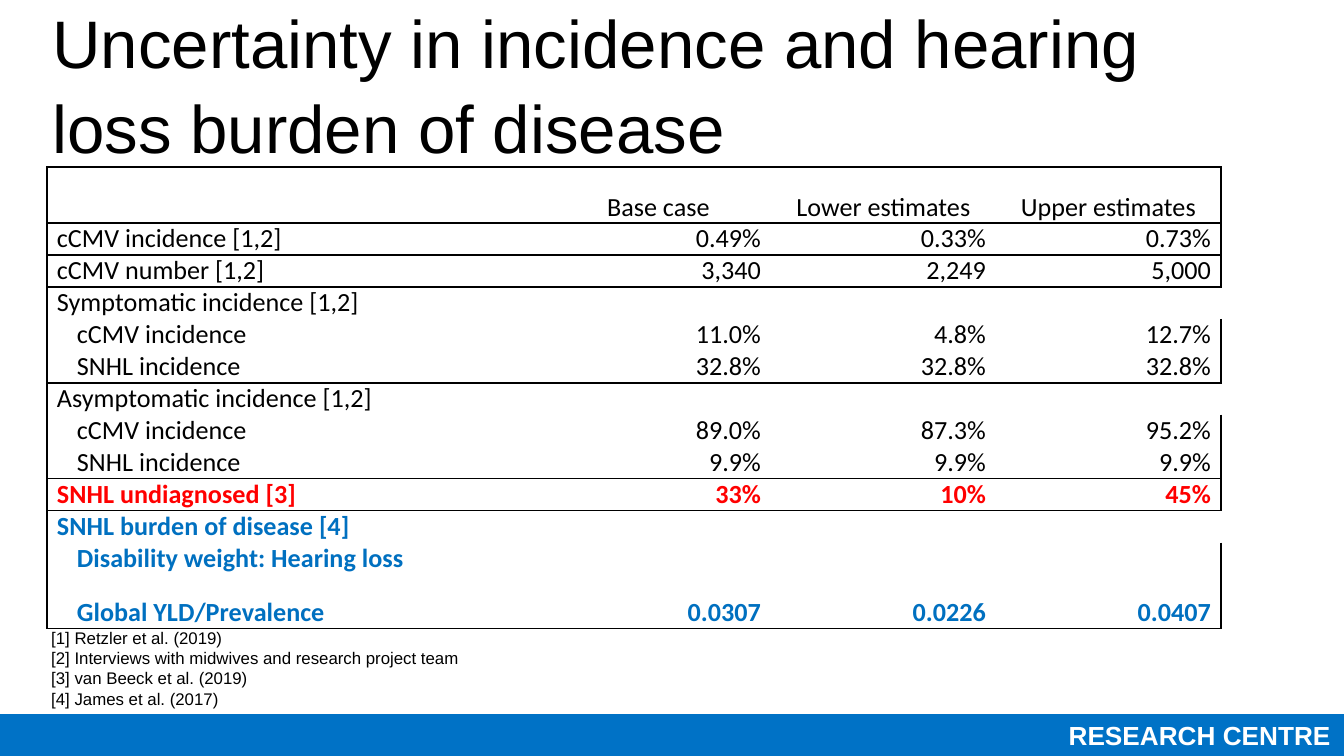
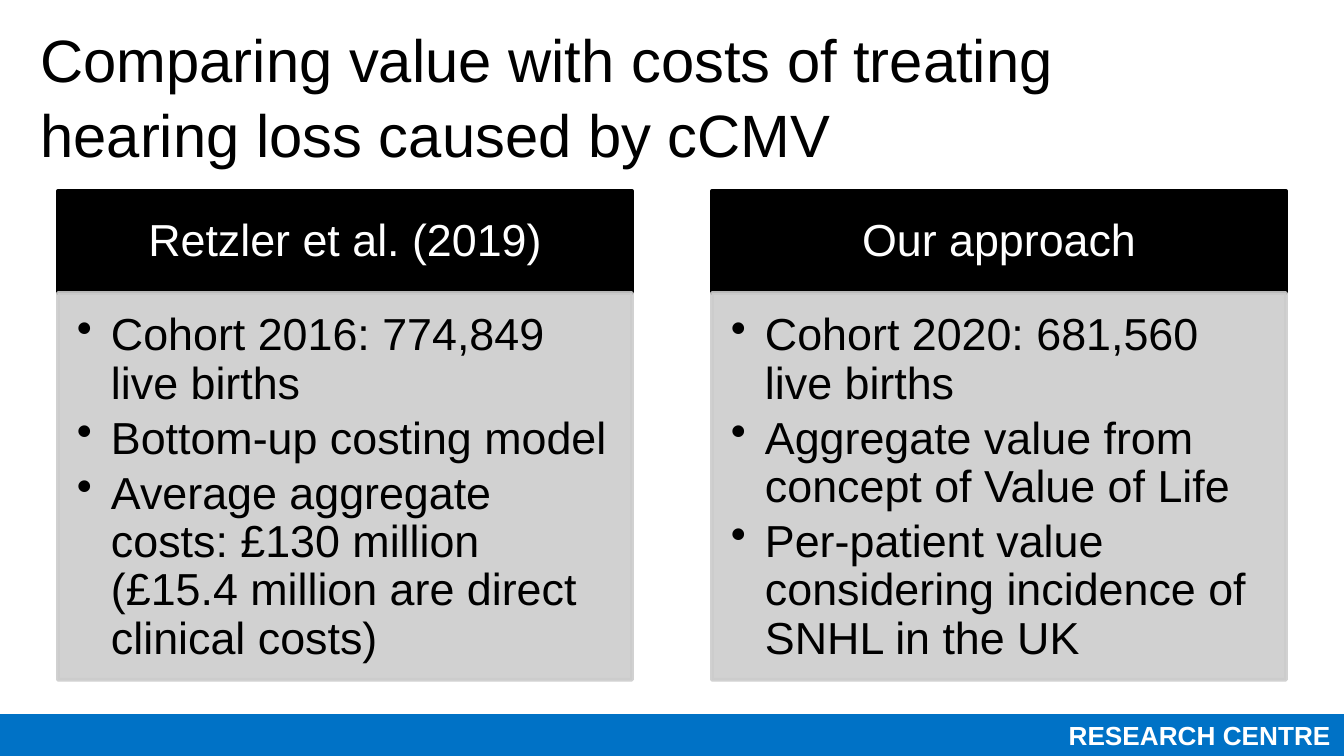
from dataclasses import dataclass

from lxml.etree import SubElement
from pptx import Presentation
from pptx.dml.color import RGBColor as Color
from pptx.enum.shapes import MSO_SHAPE as Shape
from pptx.enum.text import MSO_ANCHOR as Anchor, MSO_AUTO_SIZE as AutoSize, PP_ALIGN as Align
from pptx.oxml.ns import qn
from pptx.util import Pt

EMU_PER_PX = 914400 / 134.4
TITLE_ONLY = 5


@dataclass(frozen=True)
class Theme:
    black: str = "000000"
    white: str = "FFFFFF"
    band: str = "0072C6"
    red: str = "FF0000"
    blue: str = "0070C0"
    grey: str = "CCCCCC"
    font: str = "Arial"
    table_font: str = "Calibri"
    card_size: int = 24
    small_size: int = 14
    note_size: int = 9
    line: int = 2
    rule: int = 1
    card_opacity: int = 90


THEME = Theme()

FOOTER = "RESEARCH CENTRE"
SLIDE_SIZE = (1344, 756)
FOOTER_BOX = (0, 716, 1344, 38)

BURDEN_TITLE = ("Uncertainty in incidence and hearing loss burden of disease", (39, 19, 1210, 126), 36)
COSTS_TITLE = ("Comparing value with costs of treating hearing loss caused by cCMV", (27, 31, 1250, 126), 32)

HEADINGS = ("", "Base case", "Lower estimates", "Upper estimates")
GROUPS = [
    (THEME.black, [("cCMV incidence [1,2]", "0.49%", "0.33%", "0.73%")]),
    (THEME.black, [("cCMV number [1,2]", "3,340", "2,249", "5,000")]),
    (THEME.black, [
        ("Symptomatic incidence [1,2]",),
        ("cCMV incidence", "11.0%", "4.8%", "12.7%"),
        ("SNHL incidence", "32.8%", "32.8%", "32.8%"),
    ]),
    (THEME.black, [
        ("Asymptomatic incidence [1,2]",),
        ("cCMV incidence", "89.0%", "87.3%", "95.2%"),
        ("SNHL incidence", "9.9%", "9.9%", "9.9%"),
    ]),
    (THEME.red, [("SNHL undiagnosed [3]", "33%", "10%", "45%")]),
    (THEME.blue, [
        ("SNHL burden of disease [4]",),
        ("Disability weight: Hearing loss\nGlobal YLD/Prevalence", "0.0307", "0.0226", "0.0407"),
    ]),
]
TABLE_AT = (47, 167)
COLUMN_WIDTHS = (499, 225, 225, 225)
HEADING_HEIGHT, ROW_HEIGHT, LAST_HEIGHT = 56, 32, 82
ROW_INDENT = 20

NOTES = [
    "[1] Retzler et al. (2019)",
    "[2] Interviews with midwives and research project team",
    "[3] van Beeck et al. (2019)",
    "[4] James et al. (2017)",
]
NOTES_BOX = (38, 621, 675, 95)

CARDS = [
    ("Retzler et al. (2019)", [
        "Cohort 2016: 774,849 live births",
        "Bottom-up costing model",
        "Average aggregate costs: £130 million (£15.4 million are direct clinical costs)",
    ]),
    ("Our approach", [
        "Cohort 2020: 681,560 live births",
        "Aggregate value from concept of Value of Life",
        "Per-patient value considering incidence of SNHL in the UK",
    ]),
]
CARD_LEFT, CARD_TOP, CARD_WIDTH, CARD_STEP = 58, 191, 574, 654
CARD_HEAD, CARD_BODY = 102, 387
BULLET_INDENT = 34


def px(length):
    return round(length * EMU_PER_PX)


def scaled(lengths):
    return [px(length) for length in lengths]


def style(para, size, color, font=THEME.font, bold=False, align=Align.LEFT):
    para.alignment = align
    para.font.size = Pt(size)
    para.font.name = font
    para.font.bold = bold
    para.font.color.rgb = Color.from_string(color)


def set_margins(target, left, top, right, bottom):
    target.margin_left, target.margin_top = px(left), px(top)
    target.margin_right, target.margin_bottom = px(right), px(bottom)


def add_box(page, place, color, opacity=100):
    box = page.shapes.add_shape(Shape.RECTANGLE, *scaled(place))
    box.shadow.inherit = False
    box.fill.solid()
    box.fill.fore_color.rgb = Color.from_string(color)
    box.line.color.rgb = Color.from_string(color)
    box.line.width = Pt(THEME.line)
    if opacity < 100:
        for paint in box.element.spPr.iter(qn("a:srgbClr")):
            SubElement(paint, qn("a:alpha"), val=str(opacity * 1000))
    box.text_frame.word_wrap = True
    return box


def add_page(deck, text, place, size):
    page = deck.slides.add_slide(deck.slide_layouts[TITLE_ONLY])
    bar = add_box(page, FOOTER_BOX, THEME.band).text_frame
    bar.vertical_anchor = Anchor.MIDDLE
    bar.text = FOOTER
    style(bar.paragraphs[0], THEME.small_size, THEME.white, bold=True, align=Align.RIGHT)

    title = page.shapes.title
    title.left, title.top, title.width, title.height = scaled(place)
    frame = title.text_frame
    frame.text = text
    frame.word_wrap = True
    frame.auto_size = AutoSize.NONE
    frame.vertical_anchor = Anchor.MIDDLE
    style(frame.paragraphs[0], size, THEME.black)
    frame.paragraphs[0].line_spacing = 1.05
    return page


def set_borders(cell, **sides):
    properties = cell._tc.get_or_add_tcPr()
    for side in "LRTB":
        edge = SubElement(properties, qn(f"a:ln{side}"), w=str(Pt(THEME.rule)))
        if sides[side]:
            SubElement(SubElement(edge, qn("a:solidFill")), qn("a:srgbClr"), val=THEME.black)
        else:
            SubElement(edge, qn("a:noFill"))


def fill_cell(cell, text, color, bold, align, indent, anchor):
    cell.fill.background()
    cell.vertical_anchor = anchor
    set_margins(cell, 10, 0, 10, 0)
    cell.text = text
    for para in cell.text_frame.paragraphs:
        style(para, THEME.small_size, color, THEME.table_font, bold, align)
        para.space_before = para.space_after = Pt(6)
        if indent:
            para._p.get_or_add_pPr().set("marL", str(px(indent)))


def add_burden_table(page):
    rows = [(HEADINGS, THEME.black, True, True, False)]
    for color, group in GROUPS:
        for index, values in enumerate(group):
            rows.append((values, color, index == 0, index == len(group) - 1, index > 0))
    heights = [HEADING_HEIGHT] + [ROW_HEIGHT] * (len(rows) - 2) + [LAST_HEIGHT]
    place = (*TABLE_AT, sum(COLUMN_WIDTHS), sum(heights))
    table = page.shapes.add_table(len(rows), len(HEADINGS), *scaled(place)).table
    table.first_row = table.horz_banding = False
    for column, width in zip(table.columns, COLUMN_WIDTHS):
        column.width = px(width)
    last = len(HEADINGS) - 1
    for r, (values, color, opens, closes, nested) in enumerate(rows):
        table.rows[r].height = px(heights[r])
        spans = len(values) == 1
        if spans:
            table.cell(r, 0).merge(table.cell(r, last))
        for c in range(len(HEADINGS)):
            cell = table.cell(r, c)
            set_borders(cell, L=c == 0, R=c == last, T=opens, B=closes)
            align = Align.LEFT if c == 0 else Align.CENTER if r == 0 else Align.RIGHT
            fill_cell(
                cell,
                values[c] if c < len(values) else "",
                color,
                color != THEME.black,
                align,
                ROW_INDENT if nested and c == 0 else 0,
                Anchor.MIDDLE if spans else Anchor.BOTTOM,
            )


def add_notes(page):
    frame = page.shapes.add_textbox(*scaled(NOTES_BOX)).text_frame
    frame.word_wrap = True
    frame.auto_size = AutoSize.SHAPE_TO_FIT_TEXT
    frame.text = "\n".join(NOTES)
    for para in frame.paragraphs:
        style(para, THEME.note_size, THEME.black)


def add_card(page, left, heading, points):
    head = add_box(page, (left, CARD_TOP, CARD_WIDTH, CARD_HEAD), THEME.black).text_frame
    set_margins(head, 26, 15, 26, 15)
    head.vertical_anchor = Anchor.MIDDLE
    head.text = heading
    style(head.paragraphs[0], THEME.card_size, THEME.white, align=Align.CENTER)
    head.paragraphs[0].line_spacing = 0.9

    place = (left, CARD_TOP + CARD_HEAD, CARD_WIDTH, CARD_BODY)
    body = add_box(page, place, THEME.grey, THEME.card_opacity).text_frame
    set_margins(body, 19, 19, 24, 28)
    body.vertical_anchor = Anchor.TOP
    body.text = "\n".join(points)
    for para in body.paragraphs:
        style(para, THEME.card_size, THEME.black)
        para.level = 1
        para.line_spacing = 0.9
        para.space_after = Pt(3.6)
        properties = para._p.get_or_add_pPr()
        properties.set("marL", str(px(BULLET_INDENT)))
        properties.set("indent", str(-px(BULLET_INDENT)))
        bullet = properties.makeelement(qn("a:buChar"), {"char": "•"})
        properties.find(qn("a:defRPr")).addprevious(bullet)


def main():
    deck = Presentation()
    deck.slide_width, deck.slide_height = scaled(SLIDE_SIZE)

    burden = add_page(deck, *BURDEN_TITLE)
    add_burden_table(burden)
    add_notes(burden)

    costs = add_page(deck, *COSTS_TITLE)
    for index, (heading, points) in enumerate(CARDS):
        add_card(costs, CARD_LEFT + index * CARD_STEP, heading, points)

    deck.save("out.pptx")


if __name__ == "__main__":
    main()
